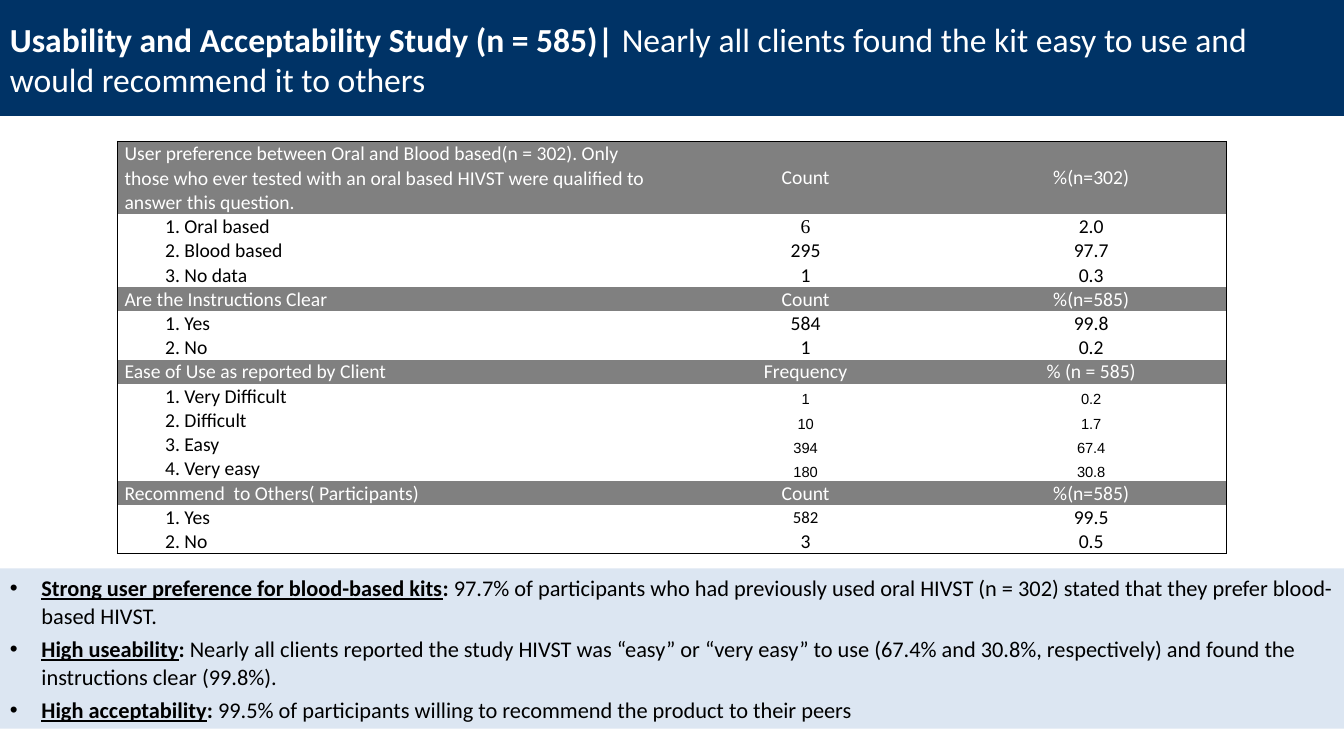
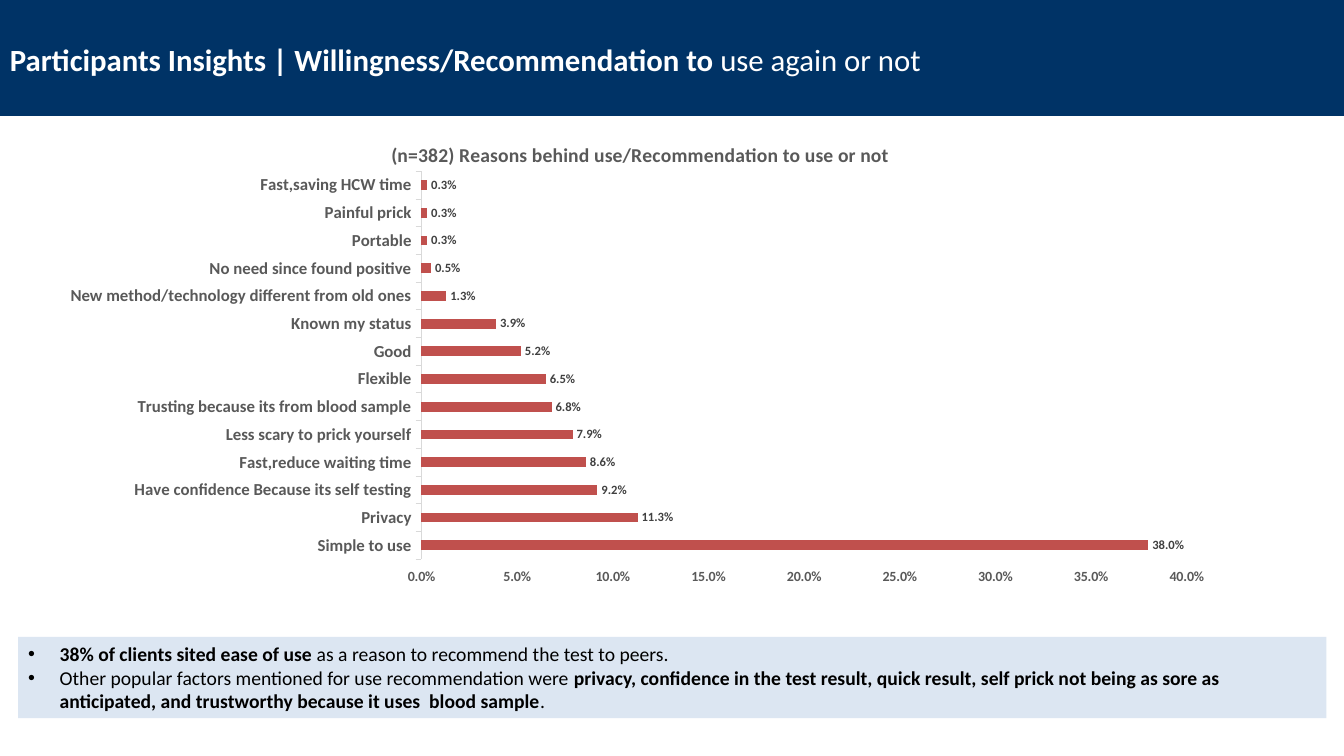
from dataclasses import dataclass

import lxml.etree
import pptx
import pptx.chart.data
import pptx.dml.color
import pptx.enum.chart
import pptx.enum.shapes
import pptx.enum.text
import pptx.oxml.ns
import pptx.util

Pt = pptx.util.Pt
RGBColor = pptx.dml.color.RGBColor
qn = pptx.oxml.ns.qn
Align = pptx.enum.text.PP_ALIGN
Anchor = pptx.enum.text.MSO_ANCHOR

NAVY = RGBColor(0x00, 0x33, 0x66)
PALE_BLUE = RGBColor(0xDC, 0xE6, 0xF2)
GRAY = RGBColor(0x80, 0x80, 0x80)
WHITE = RGBColor(0xFF, 0xFF, 0xFF)
BLACK = RGBColor(0, 0, 0)
RED = RGBColor(0xC0, 0x50, 0x4D)
AXIS_TEXT = RGBColor(0x59, 0x59, 0x59)
LABEL_TEXT = RGBColor(0x40, 0x40, 0x40)
AXIS_LINE = RGBColor(0xD9, 0xD9, 0xD9)

FONT = "Calibri"
SLIDE_WIDTH, SLIDE_HEIGHT = 960, 540
BAND_HEIGHT = 82.8
LINE_SPACING = 1.03
NO_STYLE_TABLE = "{2D5ABB26-0587-4C30-8999-92F81FD0307C}"


@dataclass(frozen=True)
class Box:
    left: float
    top: float
    width: float
    height: float

    def points(self) -> tuple:
        return Pt(self.left), Pt(self.top), Pt(self.width), Pt(self.height)


@dataclass(frozen=True)
class Span:
    text: str
    bold: bool = False
    underline: bool = False


@dataclass(frozen=True)
class CellStyle:
    font: str = FONT
    size: float = 14
    spacing: float | None = LINE_SPACING
    anchor: Anchor = Anchor.MIDDLE
    side_margin: float = 5


BODY = CellStyle()
SMALL = CellStyle("Arial", 10.5, None, Anchor.BOTTOM, 0.7)


@dataclass(frozen=True)
class Row:
    label: str
    count: str
    share: str
    heading: bool = False
    count_style: CellStyle = BODY
    share_style: CellStyle = BODY
    lines: int = 1


COLUMN_WIDTHS = (29, 355, 215, 193)
LINE_HEIGHT = 15
RESULT_ROWS = (
    Row("User preference between Oral and Blood based(n = 302). Only those who ever tested "
        "with an oral based HIVST were qualified to answer this question.",
        "Count", "%(n=302)", heading=True, lines=3),
    Row("1. Oral based", "6", "2.0", count_style=CellStyle("Times New Roman")),
    Row("2. Blood based\n3. No data", "295\n1", "97.7\n0.3", lines=2),
    Row("Are the Instructions Clear", "Count", "%(n=585)", heading=True),
    Row("1. Yes", "584", "99.8"),
    Row("2. No", "1", "0.2"),
    Row("Ease of Use as reported by Client", "Frequency", "% (n = 585)", heading=True),
    Row("1. Very Difficult", "1", "0.2", False, SMALL, SMALL),
    Row("2. Difficult", "10", "1.7", False, SMALL, SMALL),
    Row("3. Easy", "394", "67.4", False, SMALL, SMALL),
    Row("4. Very easy", "180", "30.8", False, SMALL, SMALL),
    Row("Recommend\u00a0 to Others( Participants)", "Count", "%(n=585)", heading=True),
    Row("1. Yes", "582", "99.5", count_style=CellStyle(size=12)),
    Row("2. No", "3", "0.5"),
)

USABILITY_FINDINGS = (
    (Span("Strong user preference for blood-based kits", True, True), Span(": ", True),
     Span("97.7% of participants who had previously used oral HIVST (n = 302) stated that "
          "they prefer blood-based HIVST.")),
    (Span("High useability", True, True), Span(": ", True),
     Span("Nearly all clients reported the study HIVST was “easy” or “very easy” to use "
          "(67.4% and 30.8%, respectively) and found the instructions clear (99.8%).")),
    (Span("High acceptability", True, True), Span(": ", True),
     Span("99.5% of participants willing to recommend the product to their peers")),
)

INSIGHT_FINDINGS = (
    (Span("38% of clients sited ease of use ", True),
     Span("as a reason to recommend the test to peers.")),
    (Span("Other popular factors mentioned for use recommendation were "),
     Span("privacy, confidence in the test result, quick result, self prick not being as "
          "sore as anticipated, and trustworthy because it uses  blood sample", True),
     Span(".")),
)

REASONS = {
    "Simple to use": 0.38,
    "Privacy": 0.113,
    "Have confidence Because its self testing": 0.092,
    "Fast,reduce waiting time": 0.086,
    "Less scary to prick yourself": 0.079,
    "Trusting because its from blood sample": 0.068,
    "Flexible": 0.065,
    "Good": 0.052,
    "Known my status": 0.039,
    "New method/technology different from old ones": 0.013,
    "No need since found positive": 0.005,
    "Portable": 0.003,
    "Painful prick": 0.003,
    "Fast,saving HCW time": 0.003,
}


def style_font(font, size: float, color: RGBColor, bold: bool = False, name: str = FONT) -> None:
    font.name, font.size, font.bold = name, Pt(size), bold
    font.color.rgb = color


def add_spans(paragraph, spans: tuple, size: float, color: RGBColor) -> None:
    for span in spans:
        run = paragraph.add_run()
        run.text = span.text
        style_font(run.font, size, color, span.bold)
        if span.underline:
            run.font.underline = True


def add_paragraph(frame, index: int):
    return frame.add_paragraph() if index else frame.paragraphs[0]


def add_rectangle(slide, box: Box, color: RGBColor):
    rectangle = slide.shapes.add_shape(pptx.enum.shapes.MSO_SHAPE.RECTANGLE, *box.points())
    rectangle.shadow.inherit = False
    rectangle.fill.solid()
    rectangle.fill.fore_color.rgb = color
    rectangle.line.fill.background()
    return rectangle


def add_titled_slide(deck, size: float, *spans: Span):
    slide = deck.slides.add_slide(deck.slide_layouts[6])
    add_rectangle(slide, Box(0, 0, SLIDE_WIDTH, BAND_HEIGHT), NAVY)
    title = slide.shapes.add_textbox(*Box(0, 3.6, SLIDE_WIDTH, 77).points()).text_frame
    title.word_wrap = True
    title.vertical_anchor = Anchor.MIDDLE
    add_spans(title.paragraphs[0], spans, size, WHITE)
    return slide


def add_findings(slide, box: Box, findings: tuple, size: float,
                 spacing: float = 1.0, space_after: float = 0) -> None:
    frame = add_rectangle(slide, box, PALE_BLUE).text_frame
    frame.word_wrap = True
    frame.vertical_anchor = Anchor.TOP
    for index, spans in enumerate(findings):
        paragraph = add_paragraph(frame, index)
        properties = paragraph._p.get_or_add_pPr()
        properties.set("marL", str(Pt(22.5)))
        properties.set("indent", str(-Pt(22.5)))
        lxml.etree.SubElement(properties, qn("a:buFont")).set("typeface", "Arial")
        lxml.etree.SubElement(properties, qn("a:buChar")).set("char", "•")
        paragraph.alignment = Align.LEFT
        paragraph.line_spacing = spacing
        paragraph.space_after = Pt(space_after)
        add_spans(paragraph, spans, size, BLACK)


def write_cell(cell, text: str, style: CellStyle, color: RGBColor, alignment: Align) -> None:
    cell.margin_left = cell.margin_right = Pt(style.side_margin)
    cell.margin_top = cell.margin_bottom = 0
    cell.vertical_anchor = style.anchor
    for index, line in enumerate(text.split("\n")):
        paragraph = add_paragraph(cell.text_frame, index)
        paragraph.alignment = alignment
        if style.spacing:
            paragraph.line_spacing = style.spacing
        if line:
            run = paragraph.add_run()
            run.text = line
            style_font(run.font, style.size, color, name=style.font)
        else:
            end = lxml.etree.SubElement(paragraph._p, qn("a:endParaRPr"))
            end.set("sz", str(int(style.size * 100)))


def add_borders(cell, sides: str) -> None:
    """Draw thin black borders; sides holds letters of LRTB in that order."""
    for side in sides:
        line = lxml.etree.SubElement(cell._tc.get_or_add_tcPr(), qn(f"a:ln{side}"))
        line.set("w", str(Pt(1)))
        fill = lxml.etree.SubElement(line, qn("a:solidFill"))
        lxml.etree.SubElement(fill, qn("a:srgbClr")).set("val", str(BLACK))


def add_results_table(slide) -> None:
    heights = [row.lines * LINE_HEIGHT for row in RESULT_ROWS]
    box = Box(84, 101, sum(COLUMN_WIDTHS), sum(heights))
    table = slide.shapes.add_table(len(heights), len(COLUMN_WIDTHS), *box.points()).table
    table.first_row = table.horz_banding = False
    table._tbl.tblPr.find(qn("a:tableStyleId")).text = NO_STYLE_TABLE
    for column, width in zip(table.columns, COLUMN_WIDTHS):
        column.width = Pt(width)

    last_row, last_column = len(heights) - 1, len(COLUMN_WIDTHS) - 1
    for r, row in enumerate(RESULT_ROWS):
        table.rows[r].height = Pt(heights[r])
        color = WHITE if row.heading else BLACK
        labels = (row.label, "") if row.heading else ("", row.label)
        texts = (*labels, row.count, row.share)
        styles = (BODY, BODY, row.count_style, row.share_style)
        for c, (text, style) in enumerate(zip(texts, styles)):
            cell = table.cell(r, c)
            write_cell(cell, text, style, color, Align.LEFT if c < 2 else Align.CENTER)
            edges = {"L": c == 0, "R": c == last_column, "T": r == 0, "B": r == last_row}
            add_borders(cell, "".join(side for side, outer in edges.items() if outer))
            if row.heading:
                cell.fill.solid()
                cell.fill.fore_color.rgb = GRAY
            else:
                cell.fill.background()
        if row.heading:
            table.cell(r, 0).merge(table.cell(r, 1))


def place(element, index: int, **values) -> None:
    """Give a chart part a manual layout, as its child at the index."""
    layout = element.find(qn("c:layout"))
    if layout is None:
        layout = lxml.etree.Element(qn("c:layout"))
        element.insert(index, layout)
    manual = lxml.etree.SubElement(layout, qn("c:manualLayout"))
    for key, value in values.items():
        lxml.etree.SubElement(manual, qn(f"c:{key}")).set("val", str(value))


def add_reasons_chart(slide) -> None:
    data = pptx.chart.data.CategoryChartData(number_format="0.0%")
    data.categories = list(REASONS)
    data.add_series("Series 1", list(REASONS.values()))
    chart = slide.shapes.add_chart(pptx.enum.chart.XL_CHART_TYPE.BAR_CLUSTERED,
                                   *Box(39, 85, 832, 340).points(), data).chart
    chart.has_legend = False
    style_font(chart.font, 10, BLACK)

    title = chart.chart_title
    run = title.text_frame.paragraphs[0].add_run()
    run.text = "(n=382) Reasons behind use/Recommendation to use or not"
    style_font(run.font, 14, AXIS_TEXT, True)
    title.include_in_layout = False
    place(title._element, 1, xMode="edge", yMode="edge", x=0.286, y=0.04)
    place(chart._chartSpace.chart.plotArea, 0, layoutTarget="inner", xMode="edge",
          yMode="edge", x=0.315, y=0.11, w=0.657, h=0.815)

    reasons, shares = chart.category_axis, chart.value_axis
    for axis, size in ((reasons, 12), (shares, 10)):
        axis.has_major_gridlines = False
        axis.major_tick_mark = pptx.enum.chart.XL_TICK_MARK.OUTSIDE
        style_font(axis.tick_labels.font, size, AXIS_TEXT, True)
    reasons.format.line.color.rgb = AXIS_LINE
    reasons.format.line.width = Pt(0.75)
    shares.format.line.fill.background()
    shares.minimum_scale, shares.maximum_scale, shares.major_unit = 0, 0.4, 0.05
    shares.tick_labels.number_format = "0.0%"
    shares.tick_labels.number_format_is_linked = False

    plot = chart.plots[0]
    plot.gap_width = 182
    plot.vary_by_categories = False
    bars = plot.series[0]
    bars.format.fill.solid()
    bars.format.fill.fore_color.rgb = RED
    labels = bars.data_labels
    labels.show_value = True
    labels.position = pptx.enum.chart.XL_LABEL_POSITION.OUTSIDE_END
    labels.number_format, labels.number_format_is_linked = "0.0%", False
    style_font(labels.font, 9, LABEL_TEXT, True)


def main() -> None:
    deck = pptx.Presentation()
    deck.slide_width, deck.slide_height = Pt(SLIDE_WIDTH), Pt(SLIDE_HEIGHT)

    usability = add_titled_slide(
        deck, 24, Span("Usability and Acceptability Study (n = 585)| ", True),
        Span("Nearly all clients found the kit easy to use and would recommend it to others"))
    add_findings(usability, Box(0, 406, SLIDE_WIDTH, 114.5), USABILITY_FINDINGS, 16,
                 LINE_SPACING, 4.2)
    add_results_table(usability)

    insights = add_titled_slide(
        deck, 22, Span("Participants Insights | Willingness/Recommendation to ", True),
        Span("use again or not"))
    add_findings(insights, Box(13, 455, 934.5, 58), INSIGHT_FINDINGS, 14)
    add_reasons_chart(insights)

    deck.save("out.pptx")


if __name__ == "__main__":
    main()
